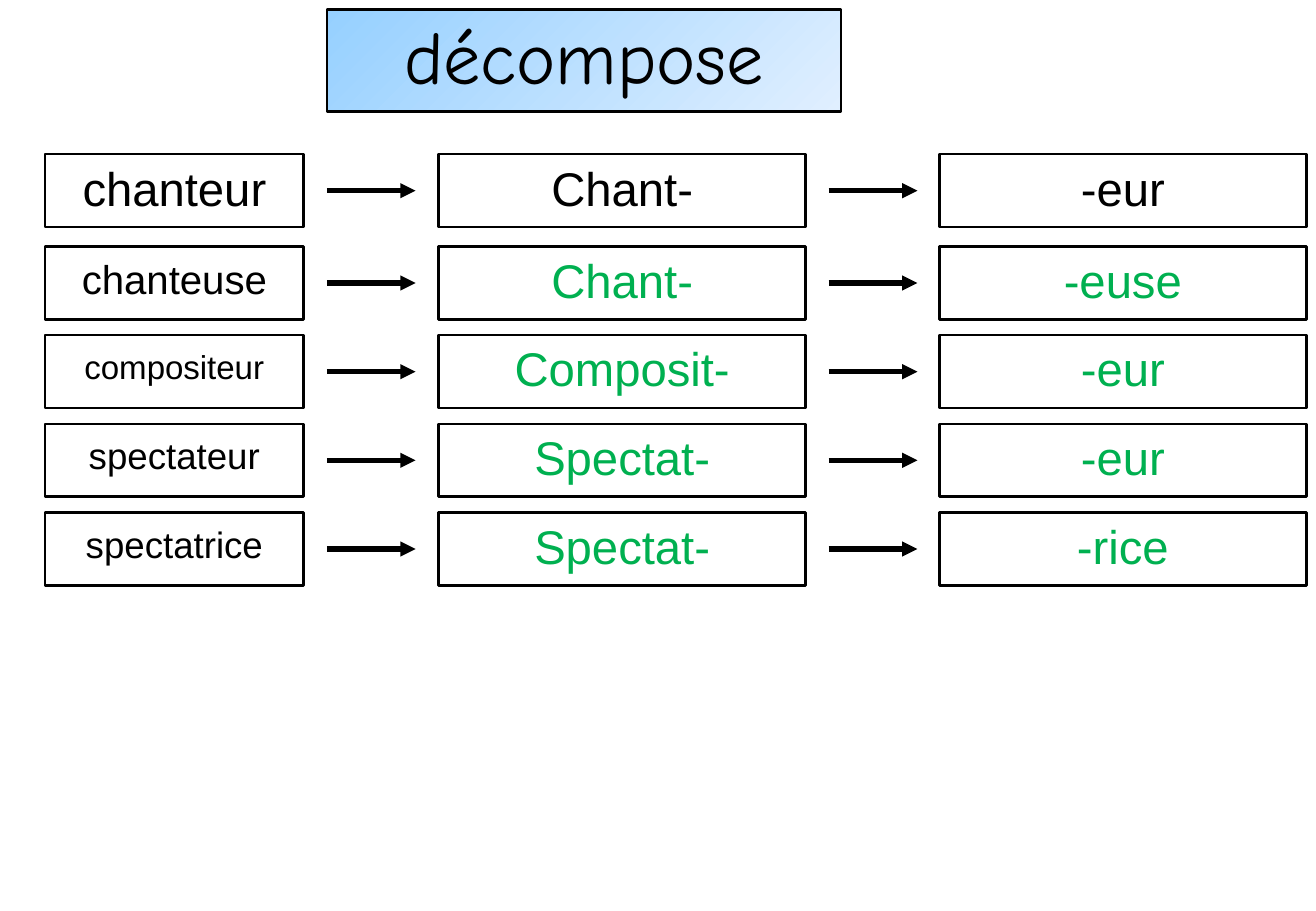
from pptx import Presentation, util as u
from pptx.dml.color import RGBColor
from pptx.enum import shapes, text
from pptx.oxml.ns import qn
from lxml import etree

BLACK, GREEN = "000000", "00B050"
COLS = [(0.37, 2.13), (3.61, 3.02), (7.73, 3.02)]
ARROWS = [2.69, 6.82]
REACH = 0.73
TOP, FIRST, STEP, HIGH = 1.27, 2.03, 0.73, 0.6

# word, its size, its line spacing, stem, ending
WORDS = [
    ("chanteur", 28, 0.9, "Chant-", "-eur"),
    ("chanteuse", 23.8, 0.8, "Chant-", "-euse"),
    ("compositeur", 19.6, 0.7, "Composit-", "-eur"),
    ("spectateur", 21.7, 0.7, "Spectat-", "-eur"),
    ("spectatrice", 21.7, 0.7, "Spectat-", "-rice"),
]


def paint(color, tone):
    color.rgb = RGBColor.from_string(tone)


def outline(shape, width):
    shape.line.fill.solid()
    paint(shape.line.color, BLACK)
    shape.line.width = u.Pt(width)


def write(shape, words, size, font, tone, space):
    frame = shape.text_frame
    frame.text = words
    frame.word_wrap = True
    frame.auto_size = text.MSO_AUTO_SIZE.NONE
    frame.vertical_anchor = text.MSO_ANCHOR.MIDDLE
    par = frame.paragraphs[0]
    par.alignment = text.PP_ALIGN.CENTER
    par.line_spacing = space
    run = par.runs[0].font
    run.size, run.name = u.Pt(size), font
    paint(run.color, tone)
    return par


def head(slide):
    title = slide.shapes.title
    title.left, title.top = u.Inches(2.69), u.Inches(0.08)
    title.width, title.height = u.Inches(4.23), u.Inches(0.84)
    title.fill.gradient()
    title.fill.gradient_angle = 315
    for stop, tone in zip(title.fill.gradient_stops, ("96D0FF", "E0EFFF")):
        paint(stop.color, tone)
    outline(title, 1.5)
    write(title, "décompose", 44, "Comic Neue", BLACK, 0.9)


def box(slide, col, top, words, tone, size=28, space=0.9):
    left, wide = COLS[col]
    shape = slide.shapes.add_shape(
        shapes.MSO_SHAPE.RECTANGLE,
        *map(u.Inches, (left, top, wide, HIGH)))
    shape.shadow.inherit = False
    shape.fill.background()
    outline(shape, 1.5)
    par = write(shape, words, size, "Arial", tone, space)
    par.space_before = u.Pt(10)


def arrow(slide, left, mid):
    line = slide.shapes.add_connector(
        shapes.MSO_CONNECTOR.STRAIGHT,
        *map(u.Inches, (left, mid, left + REACH, mid)))
    outline(line, 3)
    tip = etree.SubElement(line.line._get_or_add_ln(), qn("a:tailEnd"))
    tip.set("type", "triangle")
    etree.SubElement(line._element.spPr, qn("a:effectLst"))


def main():
    deck = Presentation()
    deck.slide_width, deck.slide_height = u.Inches(10.83), u.Inches(7.5)
    slide = deck.slides.add_slide(deck.slide_layouts[5])
    head(slide)
    for row, (word, size, space, stem, end) in enumerate(WORDS):
        top = FIRST + (row - 1) * STEP if row else TOP
        tone = GREEN if row else BLACK
        box(slide, 0, top, word, BLACK, size, space)
        box(slide, 1, top, stem, tone)
        box(slide, 2, top, end, tone)
        for left in ARROWS:
            arrow(slide, left, top + HIGH / 2)
    deck.save("out.pptx")


if __name__ == "__main__":
    main()
